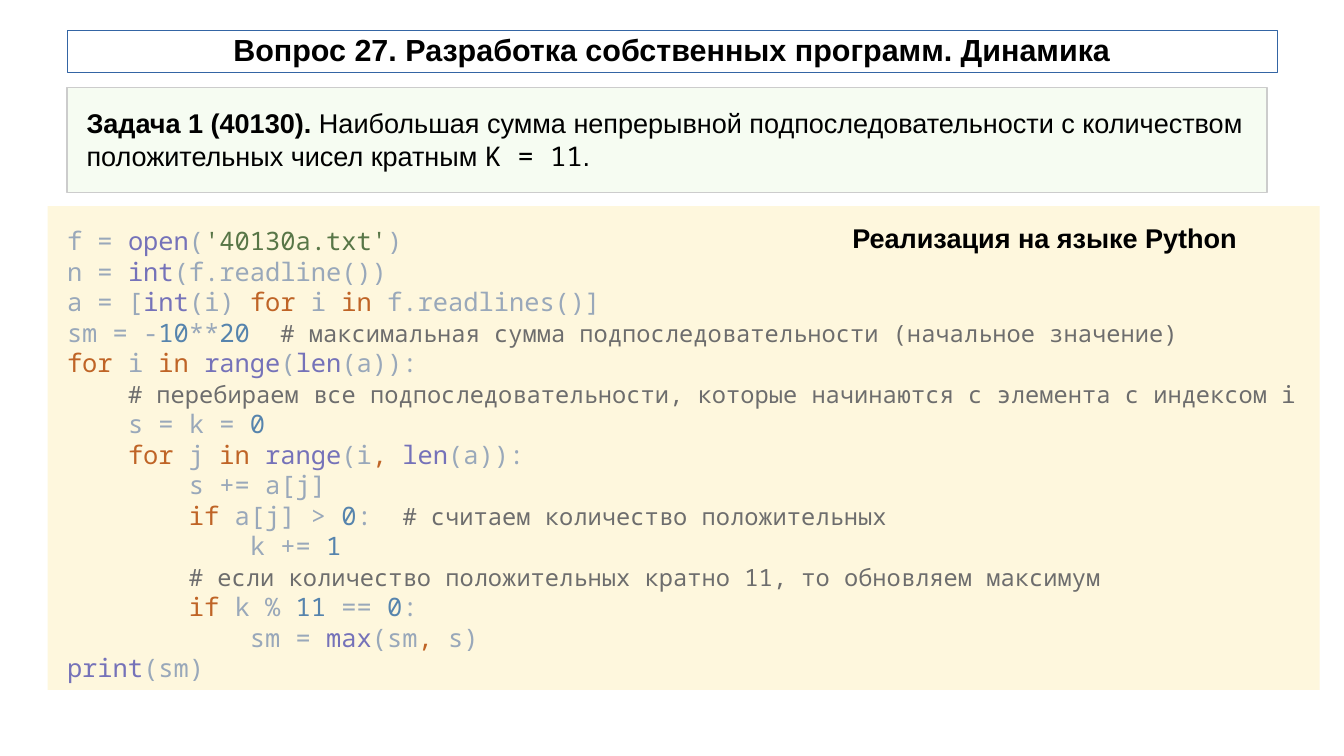
from pptx import Presentation
from pptx.dml.color import RGBColor
from pptx.enum.shapes import MSO_SHAPE
from pptx.enum.text import MSO_ANCHOR, PP_ALIGN
from pptx.util import Pt

BLACK = RGBColor(0x00, 0x00, 0x00)
TITLE_LINE = RGBColor(0x34, 0x65, 0xA4)
TASK_FILL = RGBColor(0xF6, 0xFC, 0xF2)
TASK_LINE = RGBColor(0xCC, 0xCC, 0xCC)
CODE_FILL = RGBColor(0xFE, 0xF7, 0xDD)
PLAIN = RGBColor(0x99, 0xA8, 0xBA)
BUILTIN = RGBColor(0x75, 0x72, 0xB9)
KEYWORD = RGBColor(0xBF, 0x64, 0x26)
NUMBER = RGBColor(0x56, 0x84, 0xAD)
STRING = RGBColor(0x58, 0x76, 0x47)
COMMENT = RGBColor(0x6D, 0x6D, 0x6D)

SANS, MONO = "Arial", "Noto Sans Mono"
CODE_SIZE, COMMENT_SIZE = 15, 14
INDENT = 36

TITLE = "Вопрос 27. Разработка собственных программ. Динамика"
LABEL = "Реализация на языке Python"
TASK = [
    ("Задача 1 (40130).", SANS, True),
    (" Наибольшая сумма непрерывной подпоследовательности с количеством "
     "положительных чисел кратным ", SANS, False),
    ("K = 11", MONO, False),
    (".", SANS, False),
]
CODE = [
    (0, [("f = ", PLAIN), ("open", BUILTIN), ("(", PLAIN), ("'40130a.txt'", STRING), (")", PLAIN)]),
    (0, [("n = ", PLAIN), ("int", BUILTIN), ("(f.readline())", PLAIN)]),
    (0, [("a = [", PLAIN), ("int", BUILTIN), ("(i) ", PLAIN), ("for ", KEYWORD), ("i ", PLAIN),
         ("in ", KEYWORD), ("f.readlines()]", PLAIN)]),
    (0, [("sm = -", PLAIN), ("10", NUMBER), ("**", PLAIN), ("20  ", NUMBER),
         ("# максимальная сумма подпоследовательности (начальное значение)", COMMENT)]),
    (0, [("for ", KEYWORD), ("i ", PLAIN), ("in ", KEYWORD), ("range", BUILTIN), ("(", PLAIN),
         ("len", BUILTIN), ("(a)):", PLAIN)]),
    (1, [("# перебираем все подпоследовательности, которые начинаются с элемента с индексом i", COMMENT)]),
    (1, [("s = k = ", PLAIN), ("0", NUMBER)]),
    (1, [("for ", KEYWORD), ("j ", PLAIN), ("in ", KEYWORD), ("range", BUILTIN), ("(i", PLAIN),
         (", ", KEYWORD), ("len", BUILTIN), ("(a)):", PLAIN)]),
    (2, [("s += a[j]", PLAIN)]),
    (2, [("if ", KEYWORD), ("a[j] > ", PLAIN), ("0", NUMBER), (":  ", PLAIN),
         ("# считаем количество положительных", COMMENT)]),
    (3, [("k += ", PLAIN), ("1", NUMBER)]),
    (2, [("# если количество положительных кратно 11, то обновляем максимум", COMMENT)]),
    (2, [("if ", KEYWORD), ("k % ", PLAIN), ("11 ", NUMBER), ("== ", PLAIN), ("0", NUMBER), (":", PLAIN)]),
    (3, [("sm = ", PLAIN), ("max", BUILTIN), ("(sm", PLAIN), (", ", KEYWORD), ("s)", PLAIN)]),
    (0, [("print", BUILTIN), ("(sm)", PLAIN)]),
]


def set_frame(box, inset_x, inset_y, anchor=MSO_ANCHOR.TOP):
    frame = box.text_frame
    frame.word_wrap = True
    frame.vertical_anchor = anchor
    frame.margin_left = frame.margin_right = Pt(inset_x)
    frame.margin_top = frame.margin_bottom = Pt(inset_y)
    frame.paragraphs[0].alignment = PP_ALIGN.LEFT
    return frame


def add_panel(page, left, top, width, height, fill=None, line=None, line_width=0):
    box = page.shapes.add_shape(MSO_SHAPE.RECTANGLE, Pt(left), Pt(top), Pt(width), Pt(height))
    box.shadow.inherit = False
    if fill is None:
        box.fill.background()
    else:
        box.fill.solid()
        box.fill.fore_color.rgb = fill
    if line is None:
        box.line.fill.background()
    else:
        box.line.color.rgb = line
        box.line.width = Pt(line_width)
    return box


def add_span(para, text, font, size, color, bold=False):
    span = para.add_run()
    span.text = text
    span.font.name = font
    span.font.size = Pt(size)
    span.font.bold = bold
    span.font.color.rgb = color


def add_code(frame):
    for number, (level, tokens) in enumerate(CODE):
        para = frame.add_paragraph() if number else frame.paragraphs[0]
        para.alignment = PP_ALIGN.LEFT
        para.line_spacing = Pt(18)
        properties = para._p.get_or_add_pPr()
        properties.set("marL", str(Pt(level * INDENT)))
        properties.set("indent", "0")
        for text, color in tokens:
            size = COMMENT_SIZE if color == COMMENT else CODE_SIZE
            add_span(para, text, MONO, size, color)


def main():
    deck = Presentation()
    deck.slide_width, deck.slide_height = Pt(793.44), Pt(446.4)
    page = deck.slides.add_slide(deck.slide_layouts[6])

    code_box = add_panel(page, 28.1, 121.7, 751, 285.8, CODE_FILL)
    add_code(set_frame(code_box, 11.5, 11.5))

    title_box = add_panel(page, 39.6, 18, 714.2, 24.5, line=TITLE_LINE, line_width=0.28)
    title = set_frame(title_box, 2.9, 0, MSO_ANCHOR.MIDDLE).paragraphs[0]
    title.alignment = PP_ALIGN.CENTER
    title.line_spacing = 0.9
    add_span(title, TITLE, SANS, 18, BLACK, True)

    task_box = add_panel(page, 39.6, 51.8, 708.5, 61.9, TASK_FILL, TASK_LINE)
    task = set_frame(task_box, 11.5, 11.5).paragraphs[0]
    task.line_spacing = Pt(19)
    for text, font, bold in TASK:
        add_span(task, text, font, 16, BLACK, bold)

    label_box = page.shapes.add_textbox(Pt(496.1), Pt(127.4), Pt(283), Pt(42.5))
    label = set_frame(label_box, 7.2, 3.6).paragraphs[0]
    add_span(label, LABEL, SANS, 16, BLACK, True)

    deck.save("out.pptx")


if __name__ == "__main__":
    main()
